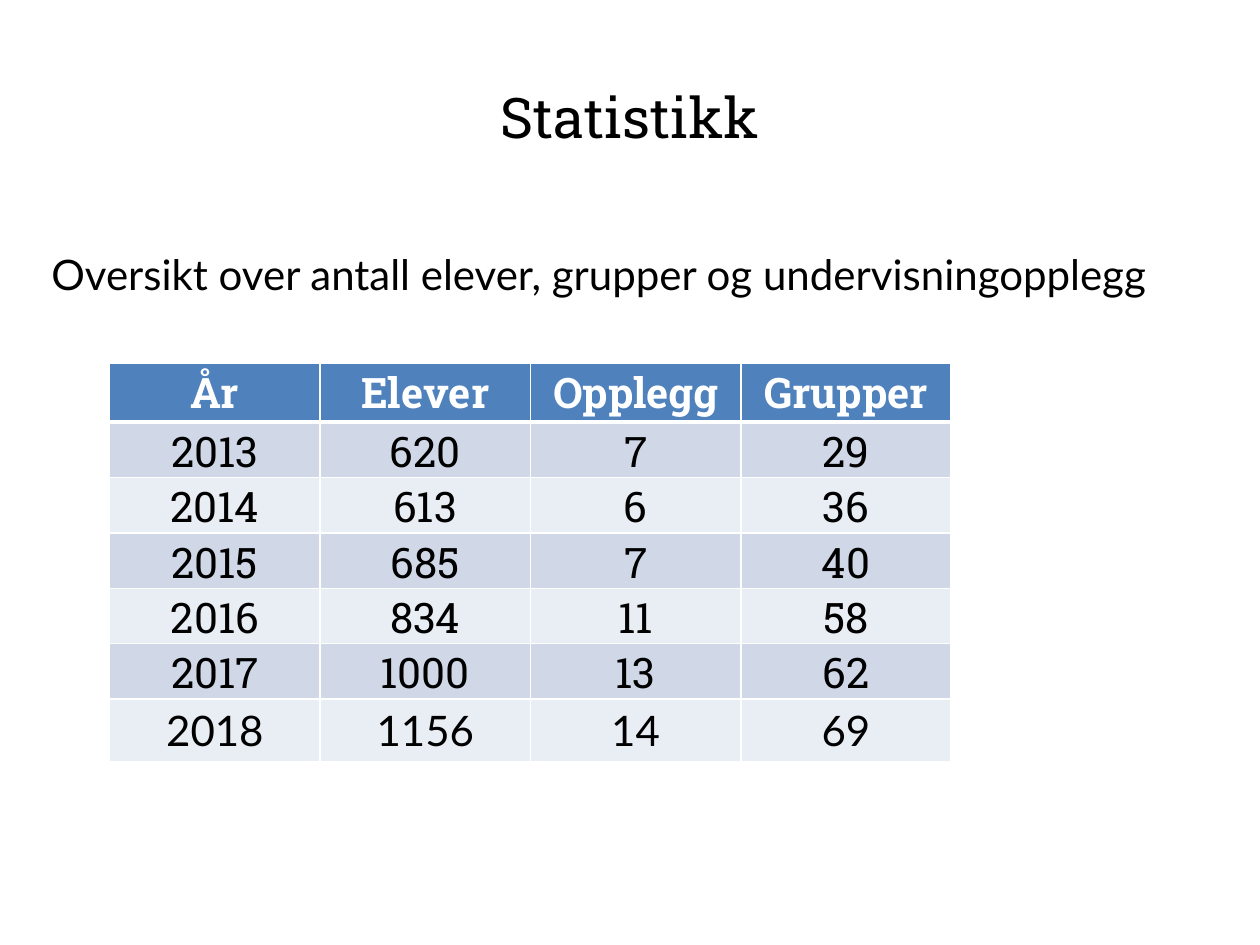
from lxml.etree import SubElement
from pptx import Presentation
from pptx.dml.color import RGBColor
from pptx.enum.text import MSO_ANCHOR, PP_ALIGN
from pptx.oxml.ns import qn
from pptx.util import Inches, Pt

HEADING_FONT = "Roboto Slab"
BODY_FONT = "Lato"
BLACK, WHITE = "000000", "FFFFFF"
HEADER_FILL = "4F81BD"
BAND_FILLS = ("D0D8E8", "E9EDF4")

STATISTICS = [
    ("År", "Elever", "Opplegg", "Grupper"),
    (2013, 620, 7, 29),
    (2014, 613, 6, 36),
    (2015, 685, 7, 40),
    (2016, 834, 11, 58),
    (2017, 1000, 13, 62),
    (2018, 1156, 14, 69),
]
# The header leaves room for descenders above its thick bottom border
ROW_HEIGHTS = [0.47] + [0.44] * 5 + [0.5]


def colour(hex_string):
    return RGBColor.from_string(hex_string)


def write(frame, text, *, font=BODY_FONT, size=24, color=BLACK, bold=False,
          align=PP_ALIGN.LEFT):
    paragraph = frame.paragraphs[0]
    paragraph.alignment = align
    run = paragraph.add_run()
    run.text = str(text)
    run.font.name = font
    run.font.size = Pt(size)
    run.font.bold = bold
    run.font.color.rgb = colour(color)


def add_borders(cell, bottom_width):
    properties = cell._tc.get_or_add_tcPr()
    widths = {"a:lnL": 1, "a:lnR": 1, "a:lnT": 1, "a:lnB": bottom_width}
    for side, width in widths.items():
        line = SubElement(properties, qn(side), w=str(Pt(width)))
        fill = SubElement(line, qn("a:solidFill"))
        SubElement(fill, qn("a:srgbClr"), val=WHITE)


class StatisticsSlide:
    def __init__(self, presentation):
        self.slide = presentation.slides.add_slide(presentation.slide_layouts[6])
        background = self.slide.background.fill
        background.solid()
        background.fore_color.rgb = colour(WHITE)

    def text(self, text, left, top, width, height, anchor=MSO_ANCHOR.TOP, **style):
        box = self.slide.shapes.add_textbox(
            Inches(left), Inches(top), Inches(width), Inches(height))
        frame = box.text_frame
        frame.word_wrap = True
        frame.vertical_anchor = anchor
        write(frame, text, **style)

    def table(self, rows, left, top, column_width, row_heights):
        columns = len(rows[0])
        table = self.slide.shapes.add_table(
            len(rows), columns, Inches(left), Inches(top),
            Inches(column_width * columns), Inches(sum(row_heights))).table
        table.horz_banding = False
        for column in table.columns:
            column.width = Inches(column_width)
        for index, (values, height) in enumerate(zip(rows, row_heights)):
            table.rows[index].height = Inches(height)
            for column, value in enumerate(values):
                self.cell(table.cell(index, column), value,
                          header=index == 0,
                          latest=index == len(rows) - 1,
                          fill=BAND_FILLS[(index - 1) % 2])

    def cell(self, cell, value, header, latest, fill):
        add_borders(cell, bottom_width=3 if header else 1)
        cell.fill.solid()
        cell.fill.fore_color.rgb = colour(HEADER_FILL if header else fill)
        # The latest year keeps the default margins and the body font
        if not latest:
            cell.vertical_anchor = MSO_ANCHOR.BOTTOM
            cell.margin_left = cell.margin_right = cell.margin_top = Inches(0.01)
            cell.margin_bottom = Inches(0.02 if header else 0)
        write(cell.text_frame, value,
              font=BODY_FONT if latest else HEADING_FONT,
              color=WHITE if header else BLACK,
              bold=header, align=PP_ALIGN.CENTER)


def main():
    presentation = Presentation()
    presentation.slide_width = Inches(10)
    presentation.slide_height = Inches(7.5)
    page = StatisticsSlide(presentation)

    # Title
    page.text("Statistikk", 0.5, 0.3, 9, 1.25, anchor=MSO_ANCHOR.MIDDLE,
              font=HEADING_FONT, size=32, align=PP_ALIGN.CENTER)

    # Introduction
    page.text("Oversikt over antall elever, grupper og undervisningopplegg",
              0.31, 1.92, 9.23, 4.78)

    # Yearly figures
    page.table(STATISTICS, 0.87, 2.88, column_width=1.67, row_heights=ROW_HEIGHTS)

    presentation.save("out.pptx")


if __name__ == "__main__":
    main()
